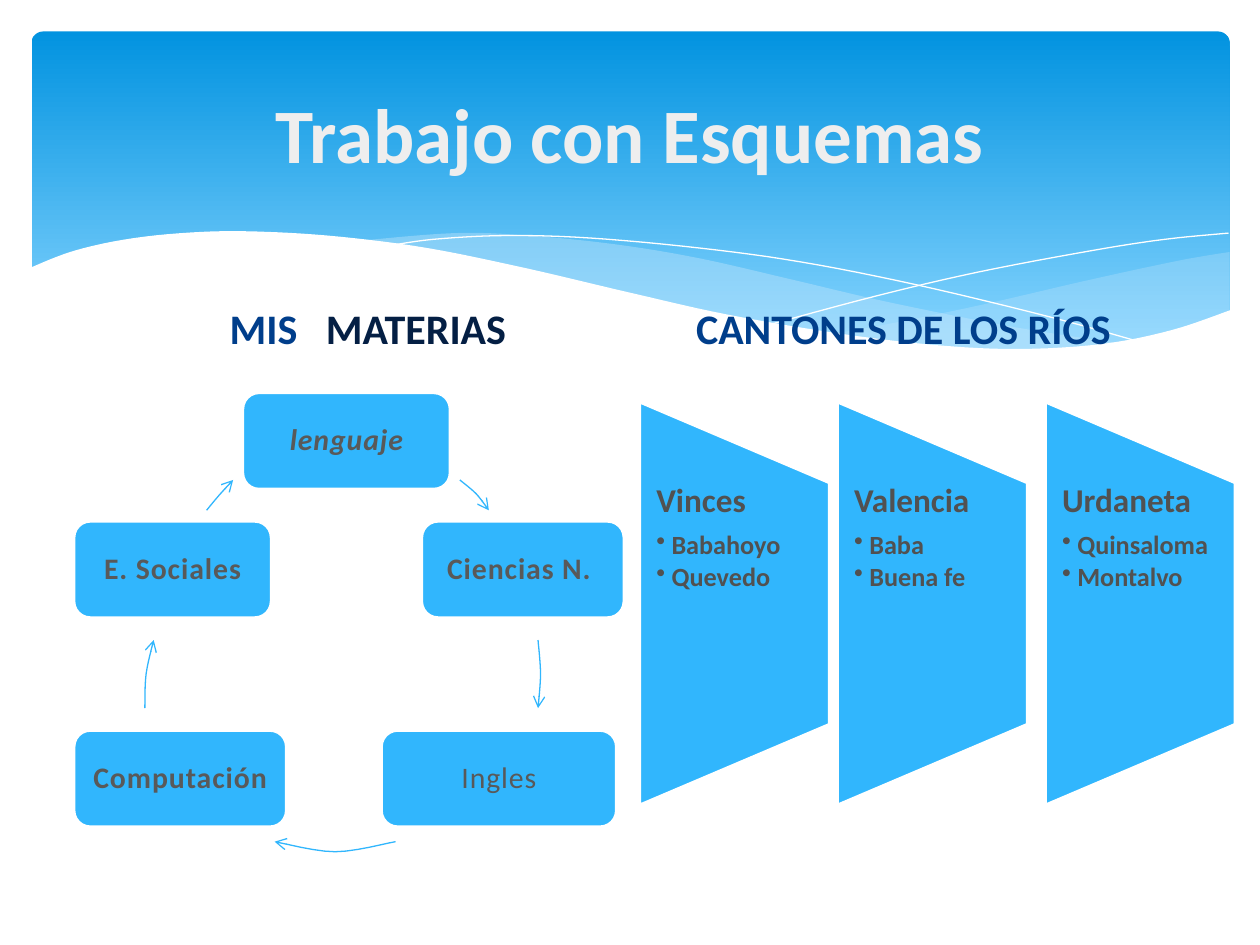
"""Build a slide with a cycle of school subjects and columns of cantons."""
from pptx import Presentation
from pptx.dml.color import RGBColor
from pptx.enum import shapes, text
from pptx.oxml import ns, xmlchemy
from pptx.util import Inches, Pt

FONT = "Calibri"
WHITE = RGBColor(0xFF, 0xFF, 0xFF)
SKY_TOP = RGBColor(0x02, 0x93, 0xE0)
SKY_BOTTOM = RGBColor(0x83, 0xD3, 0xFE)
MIST = RGBColor(0xC6, 0xE7, 0xFC)
BLUE = RGBColor(0x31, 0xB6, 0xFD)
TITLE_GRAY = RGBColor(0xEE, 0xEE, 0xEE)
NAVY = RGBColor(0x00, 0x3E, 0x8B)
DARK_NAVY = RGBColor(0x04, 0x1F, 0x44)
SUBJECT_GRAY = RGBColor(0x59, 0x59, 0x59)
CANTON_GRAY = RGBColor(0x51, 0x51, 0x51)

TITLE = "Trabajo con Esquemas"
HEADINGS = [
    (0.83, [("MIS", NAVY, 0), (" ", NAVY, 1080), ("MATERIAS", DARK_NAVY, 0)]),
    (5.08, [("CANTONES DE LOS RÍOS", NAVY, 0)]),
]
SUBJECTS = [
    ("lenguaje", 1.93, 3.12, 1.64, True, True),
    ("Ciencias N. ", 3.35, 4.14, 1.6, True, False),
    ("Ingles", 3.03, 5.8, 1.86, False, False),
    ("Computación", 0.59, 5.8, 1.68, True, False),
    ("E. Sociales", 0.59, 4.14, 1.56, True, False),
]
CYCLE_ARROWS = [
    [(3.65, 3.81), (3.78, 3.92), (3.88, 4.05)],
    [(4.27, 5.08), (4.29, 5.35), (4.27, 5.62)],
    [(3.14, 6.68), (2.66, 6.76), (2.18, 6.68)],
    [(1.15, 5.62), (1.16, 5.35), (1.22, 5.08)],
    [(1.64, 4.05), (1.74, 3.93), (1.85, 3.81)],
]
CANTONS = [
    (5.08, "Vinces", ["Babahoyo", "Quevedo"]),
    (6.65, "Valencia", ["Baba", "Buena fe"]),
    (8.3, "Urdaneta", ["Quinsaloma", "Montalvo"]),
]
RIGHT_MIST = [
    [(9.76, 2), (9.35, 2.07), (8.61, 2.23), (7.79, 2.42), (7.06, 2.57), (6.61, 2.65)],
    [(6.61, 2.65), (7.19, 2.72), (7.69, 2.77), (8.14, 2.78), (8.63, 2.75),
     (9.05, 2.69), (9.42, 2.59), (9.76, 2.47)],
]
CENTER_MIST = [
    [(8.93, 2.73), (8.07, 2.6), (7.06, 2.4), (6.29, 2.22), (5.55, 2.05),
     (4.89, 1.94), (4.2, 1.87), (3.61, 1.85), (2.86, 1.91)],
    [(2.86, 1.91), (3.62, 2.03), (4.49, 2.22), (5.3, 2.4), (6.18, 2.58),
     (6.95, 2.7), (7.61, 2.77), (8.18, 2.78), (8.93, 2.73)],
]
WHITE_WAVE = [
    [(9.77, 2.46), (9.3, 2.62), (8.75, 2.73), (8.09, 2.77), (7.44, 2.74),
     (6.68, 2.65), (5.79, 2.5), (5.03, 2.33), (4.18, 2.13), (3.4, 1.97),
     (2.71, 1.88), (2.11, 1.84), (1.61, 1.84), (1.06, 1.89), (0.59, 1.99), (0.23, 2.13)],
    [(0.23, 3.29), (9.77, 3.29)],
]
HAIRLINES = [
    [(3.09, 1.95), (3.44, 1.9), (4.01, 1.87), (4.69, 1.89), (5.56, 1.97),
     (6.36, 2.08), (7.27, 2.26), (8.31, 2.51), (9.07, 2.72)],
    [(6.13, 2.57), (6.95, 2.35), (7.76, 2.16), (8.66, 1.99), (9.24, 1.9), (9.75, 1.85)],
]


def smooth(knots, steps=6):
    """Return points on a Catmull-Rom curve through the knots."""
    ends = [knots[0], *knots, knots[-1]]
    points = [knots[0]]
    for a, b, c, d in zip(ends, ends[1:], ends[2:], ends[3:]):
        for step in range(1, steps + 1):
            t = step / steps
            points.append(tuple(
                (2 * q + (r - p) * t + (2 * p - 5 * q + 4 * r - s) * t ** 2
                 + (3 * q - p - 3 * r + s) * t ** 3) / 2
                for p, q, r, s in zip(a, b, c, d)))
    return points


def add_curve(slide, edges, closed):
    """Add a freeform made of smoothed edges."""
    points = [(Inches(x), Inches(y)) for edge in edges for x, y in smooth(edge)]
    builder = slide.shapes.build_freeform(*points[0])
    builder.add_line_segments(points[1:], close=closed)
    curve = builder.convert_to_shape()
    curve.shadow.inherit = False
    return curve


def add_wave(slide, edges, color, opacity=100):
    """Add a filled wave."""
    wave = add_curve(slide, edges, True)
    paint(wave, color)
    if opacity < 100:
        tint = wave.element.spPr.find(ns.qn("a:solidFill"))[0]
        xmlchemy.OxmlElement("a:alpha")
        alpha = xmlchemy.OxmlElement("a:alpha")
        alpha.set("val", str(opacity * 1000))
        tint.append(alpha)


def add_stroke(slide, knots, color, width, arrow=False):
    """Add an open curved line."""
    stroke = add_curve(slide, [knots], False)
    stroke.fill.background()
    stroke.line.color.rgb = color
    stroke.line.width = Pt(width)
    if arrow:
        head = xmlchemy.OxmlElement("a:tailEnd")
        head.set("type", "arrow")
        stroke.element.spPr.find(ns.qn("a:ln")).append(head)


def paint(shape, color, outline=None):
    """Give a shape a flat fill and an optional outline."""
    shape.shadow.inherit = False
    shape.fill.solid()
    shape.fill.fore_color.rgb = color
    if outline is None:
        shape.line.fill.background()
    else:
        shape.line.color.rgb = outline
        shape.line.width = Pt(1.25)


def add_box(slide, left, top, width, height, anchor=text.MSO_ANCHOR.MIDDLE):
    """Add a wrapping text box and return its frame."""
    frame = slide.shapes.add_textbox(*map(Inches, (left, top, width, height))).text_frame
    frame.word_wrap = True
    frame.vertical_anchor = anchor
    return frame


def style(paragraph, size, color=None, bold=True, italic=False):
    """Set the paragraph font."""
    font = paragraph.font
    font.name, font.size, font.bold, font.italic = FONT, Pt(size), bold, italic
    if color is not None:
        font.color.rgb = color


def add_banner(slide):
    """Add the gradient banner with its waves and title."""
    banner = slide.shapes.add_shape(
        shapes.MSO_SHAPE.ROUNDED_RECTANGLE, *map(Inches, (0.25, 0.25, 9.51, 2.7)))
    banner.adjustments[0] = 0.034
    banner.shadow.inherit = False
    banner.line.fill.background()
    banner.fill.gradient()
    banner.fill.gradient_angle = 270
    for stop, color, position in zip(
            banner.fill.gradient_stops, (SKY_TOP, SKY_BOTTOM), (0, 0.9)):
        stop.color.rgb, stop.position = color, position
    add_wave(slide, RIGHT_MIST, MIST, 29)
    add_wave(slide, CENTER_MIST, MIST, 40)
    for hairline in HAIRLINES:
        add_stroke(slide, hairline, WHITE, 0)
    add_wave(slide, WHITE_WAVE, WHITE)
    title = add_box(slide, 0.5, 0.37, 9, 1.37).paragraphs[0]
    title.text, title.alignment = TITLE, text.PP_ALIGN.CENTER
    style(title, 44, TITLE_GRAY)


def add_heading(slide, left, words):
    """Add a heading whose words carry their own colour and spacing."""
    heading = add_box(slide, left, 2.25, 4.18, 0.7).paragraphs[0]
    heading.alignment = text.PP_ALIGN.CENTER
    style(heading, 24)
    for word, color, spacing in words:
        run = heading.add_run()
        run.text = word
        run.font.color.rgb = color
        if spacing:
            run.font._element.set("spc", str(spacing))


def add_subject(slide, name, left, top, width, bold, italic):
    """Add one rounded box of the cycle."""
    box = slide.shapes.add_shape(
        shapes.MSO_SHAPE.ROUNDED_RECTANGLE, *map(Inches, (left, top, width, 0.76)))
    paint(box, BLUE, WHITE)
    frame = box.text_frame
    frame.margin_left = frame.margin_right = Inches(0.07)
    frame.vertical_anchor = text.MSO_ANCHOR.MIDDLE
    label = frame.paragraphs[0]
    label.text, label.alignment, label.line_spacing = name, text.PP_ALIGN.CENTER, 0.9
    label.runs[0].font._element.set("spc", "50")
    style(label, 17, SUBJECT_GRAY, bold, italic)


def add_canton(slide, left, name, places):
    """Add one trapezoid column with its heading and bullets."""
    length, width, middle = 3.19, 1.5, 4.79
    column = slide.shapes.add_shape(
        shapes.MSO_SHAPE.FLOWCHART_MANUAL_OPERATION,
        *map(Inches, (left + (width - length) / 2, middle - width / 2, length, width)))
    column.rotation = 270
    paint(column, BLUE, WHITE)
    frame = add_box(slide, left, 3.84, width, 1.91, text.MSO_ANCHOR.TOP)
    frame.margin_left = frame.margin_right = Inches(0.13)
    frame.margin_top = frame.margin_bottom = 0
    for index, line in enumerate([name, *places]):
        paragraph = frame.add_paragraph() if index else frame.paragraphs[0]
        paragraph.text, paragraph.line_spacing = line, 0.9
        paragraph.space_after = Pt(2.25 if index else 6.65)
        if index:
            paragraph.level = 1
            properties = paragraph._p.get_or_add_pPr()
            properties.set("marL", str(Inches(0.12)))
            properties.set("indent", str(Inches(-0.12)))
            bullet = xmlchemy.OxmlElement("a:buChar")
            bullet.set("char", "•")
            properties.append(bullet)
        style(paragraph, 15 if index else 19, CANTON_GRAY)


def main():
    """Assemble and save the slide."""
    deck = Presentation()
    deck.slide_width, deck.slide_height = Inches(10), Inches(7.5)
    slide = deck.slides.add_slide(deck.slide_layouts[6])
    add_banner(slide)
    for heading in HEADINGS:
        add_heading(slide, *heading)
    for subject, arrow in zip(SUBJECTS, CYCLE_ARROWS):
        add_subject(slide, *subject)
        add_stroke(slide, arrow, BLUE, 0.75, arrow=True)
    for canton in CANTONS:
        add_canton(slide, *canton)
    deck.save("out.pptx")


if __name__ == "__main__":
    main()
